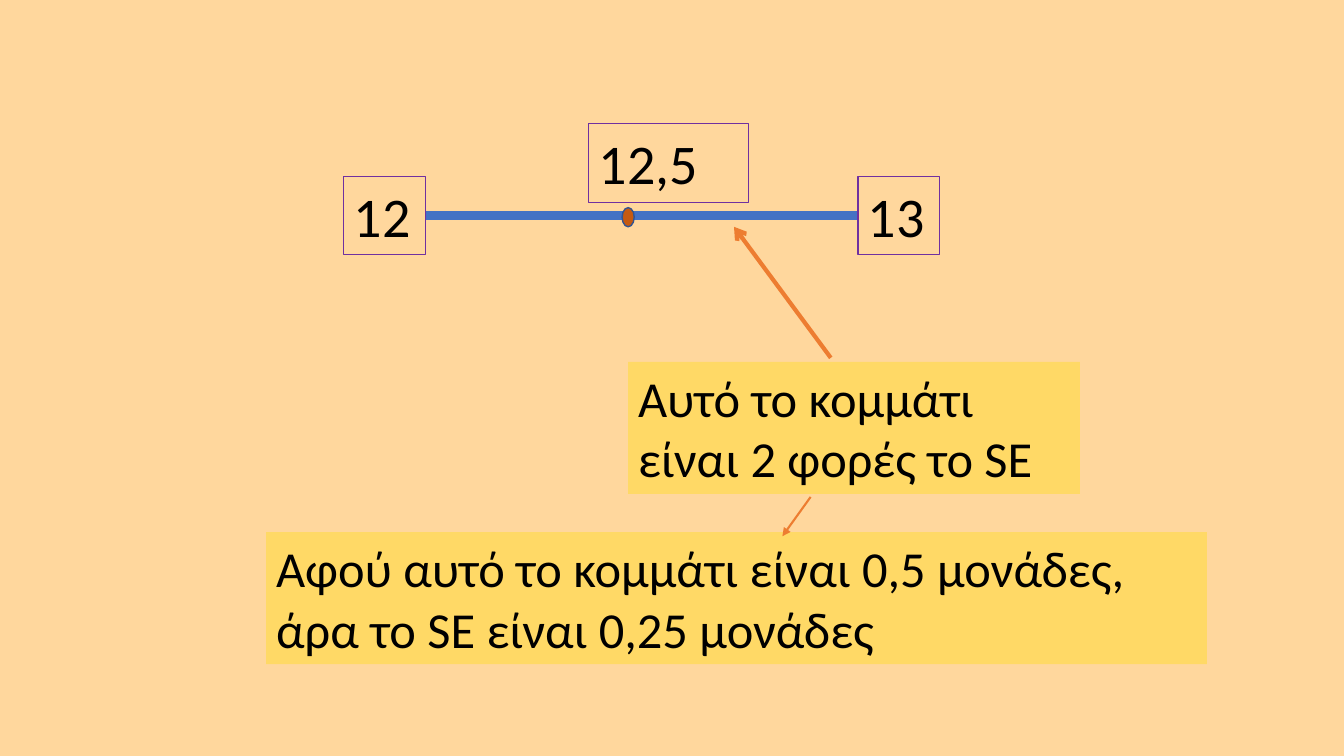
from lxml import etree
from pptx import Presentation
from pptx.dml.color import RGBColor
from pptx.enum.shapes import MSO_CONNECTOR, MSO_SHAPE
from pptx.enum.text import MSO_ANCHOR, PP_ALIGN
from pptx.oxml.ns import qn
from pptx.util import Inches, Pt

RECT, OVAL = MSO_SHAPE.RECTANGLE, MSO_SHAPE.OVAL
STRAIGHT = MSO_CONNECTOR.STRAIGHT
LEFT, TOP = PP_ALIGN.LEFT, MSO_ANCHOR.TOP

PEACH = RGBColor(0xFF, 0xD7, 0x9D)
YELLOW = RGBColor(0xFF, 0xD9, 0x66)
ORANGE = RGBColor(0xED, 0x7D, 0x31)
BROWN = RGBColor(0xC5, 0x5A, 0x11)
BLUE = RGBColor(0x44, 0x72, 0xC4)
NAVY = RGBColor(0x32, 0x54, 0x91)
PURPLE = RGBColor(0x70, 0x30, 0xA0)
BLACK = RGBColor(0, 0, 0)
FONT = "Calibri"


def add_box(slide, kind, x, y, w, h, fill=None, line=None, weight=0.75):
    sp = slide.shapes.add_shape(kind, Inches(x), Inches(y), Inches(w), Inches(h))
    sp.shadow.inherit = False
    if fill is None:
        sp.fill.background()
    else:
        sp.fill.solid()
        sp.fill.fore_color.rgb = fill
    if line is None:
        sp.line.fill.background()
    else:
        sp.line.color.rgb = line
        sp.line.width = Pt(weight)
    return sp


def add_text(sp, text, size):
    tf = sp.text_frame
    tf.word_wrap = True
    tf.vertical_anchor = TOP
    p = tf.paragraphs[0]
    p.alignment = LEFT
    r = p.add_run()
    r.text = text
    r.font.name = FONT
    r.font.size = Pt(size)
    r.font.color.rgb = BLACK


def add_line(slide, start, end, color, weight, head=None):
    cx = slide.shapes.add_connector(
        STRAIGHT, *(Inches(v) for v in (*start, *end)))
    cx.line.color.rgb = color
    cx.line.width = Pt(weight)
    if head:
        etree.SubElement(cx.line._get_or_add_ln(), qn("a:tailEnd"), type=head)
    etree.SubElement(cx._element.spPr, qn("a:effectLst"))


def number_line(slide, x, y, w, h):
    """Segment from 12 to 13 with its midpoint marked."""
    label_w, label_h = 0.81, 0.78
    axis_y = y + 0.91
    add_line(slide, (x + label_w, axis_y), (x + w - label_w, axis_y), BLUE, 6)
    # Labels: both ends sit at the bottom, the midpoint at the top
    for text, left, top, width in (
            ("12", x, y + h - label_h, label_w),
            ("12,5", x + 2.43, y, 1.58),
            ("13", x + w - label_w, y + h - label_h, label_w)):
        sp = add_box(slide, RECT, left, top, width, label_h, line=PURPLE)
        add_text(sp, text, 40)
    # Midpoint marker
    add_box(slide, OVAL, x + 2.76, axis_y - 0.08, 0.12, 0.19, BROWN, NAVY, 1)


def explanation(slide, x, y, w, h):
    """Two notes, the upper one pointing to the segment and the lower note."""
    note_h = 1.31
    for text, left, top, width in (
            ("Αυτό το κομμάτι είναι 2 φορές το SE", x + 3.59, y, 4.48),
            ("Αφού αυτό το κομμάτι είναι 0,5 μονάδες, άρα το SE είναι 0,25 μονάδες",
             x, y + h - note_h, w)):
        sp = add_box(slide, RECT, left, top, width, note_h, YELLOW)
        add_text(sp, text, 36)
    # Arrows up to the segment and down to the lower note
    add_line(slide, (x + 5.6, y - 0.04), (x + 4.64, y - 1.34), ORANGE, 3, "arrow")
    add_line(slide, (x + 5.4, y + note_h + 0.03),
             (x + 5.12, y + h - note_h + 0.04), ORANGE, 1.5, "triangle")


def main():
    prs = Presentation()
    prs.slide_width, prs.slide_height = Inches(13.33), Inches(7.5)
    slide = prs.slides.add_slide(prs.slide_layouts[6])
    slide.background.fill.solid()
    slide.background.fill.fore_color.rgb = PEACH
    number_line(slide, 3.41, 1.23, 5.91, 1.3)
    explanation(slide, 2.64, 3.59, 9.33, 3)
    prs.save("out.pptx")


if __name__ == "__main__":
    main()
